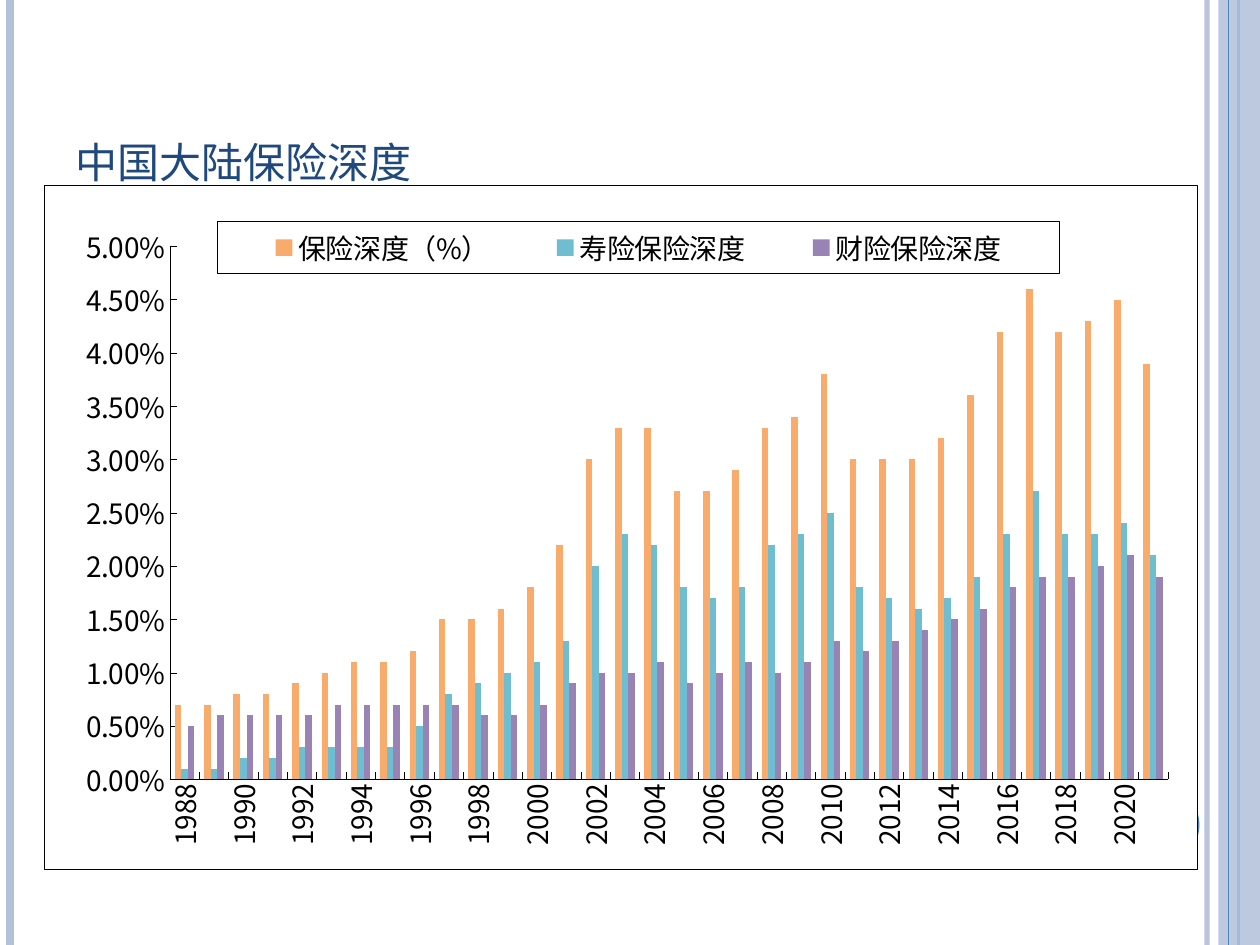
from pptx import Presentation
from pptx.chart.data import CategoryChartData
from pptx.dml.color import RGBColor
from pptx.enum.chart import XL_CHART_TYPE, XL_LEGEND_POSITION, XL_TICK_MARK
from pptx.enum.shapes import MSO_CONNECTOR, MSO_SHAPE
from pptx.enum.text import MSO_ANCHOR, PP_ALIGN
from pptx.oxml import parse_xml
from pptx.oxml.ns import nsdecls, qn
from pptx.util import Inches, Pt

COLUMNS = XL_CHART_TYPE.COLUMN_CLUSTERED
LEGEND_RIGHT = XL_LEGEND_POSITION.RIGHT
TICK_IN, TICK_NONE = XL_TICK_MARK.INSIDE, XL_TICK_MARK.NONE
STRAIGHT = MSO_CONNECTOR.STRAIGHT
RECTANGLE, OVAL = MSO_SHAPE.RECTANGLE, MSO_SHAPE.OVAL
BOTTOM, LEFT = MSO_ANCHOR.BOTTOM, PP_ALIGN.LEFT

WHITE = RGBColor(0xFF, 0xFF, 0xFF)
BLACK = RGBColor(0, 0, 0)
PALE_BLUE = RGBColor(0xB3, 0xC1, 0xDB)
BLUE = RGBColor(0x4F, 0x81, 0xBD)
NAVY = RGBColor(0x1F, 0x49, 0x7D)
ORANGE = RGBColor(0xF9, 0xAB, 0x6B)
TEAL = RGBColor(0x6F, 0xBD, 0xD1)
PURPLE = RGBColor(0x99, 0x83, 0xB5)

TITLE_FONT, CHART_FONT = "Cambria", "Noto Sans CJK SC"
HAIRLINE = Pt(0.25)
WIDTH, HEIGHT = Inches(10), Inches(7.5)

YEARS = [str(year) for year in range(1988, 2022)]
DEPTHS = [
    ("保险深度（%）", ORANGE,
     [0.007, 0.007, 0.008, 0.008, 0.009, 0.01, 0.011, 0.011, 0.012, 0.015, 0.015, 0.016,
      0.018, 0.022, 0.03, 0.033, 0.033, 0.027, 0.027, 0.029, 0.033, 0.034, 0.038, 0.03,
      0.03, 0.03, 0.032, 0.036, 0.042, 0.046, 0.042, 0.043, 0.045, 0.039]),
    ("寿险保险深度", TEAL,
     [0.001, 0.001, 0.002, 0.002, 0.003, 0.003, 0.003, 0.003, 0.005, 0.008, 0.009, 0.01,
      0.011, 0.013, 0.02, 0.023, 0.022, 0.018, 0.017, 0.018, 0.022, 0.023, 0.025, 0.018,
      0.017, 0.016, 0.017, 0.019, 0.023, 0.027, 0.023, 0.023, 0.024, 0.021]),
    ("财险保险深度", PURPLE,
     [0.005, 0.006, 0.006, 0.006, 0.006, 0.007, 0.007, 0.007, 0.007, 0.007, 0.006, 0.006,
      0.007, 0.009, 0.01, 0.01, 0.011, 0.009, 0.01, 0.011, 0.01, 0.011, 0.013, 0.012,
      0.013, 0.014, 0.015, 0.016, 0.018, 0.019, 0.019, 0.02, 0.021, 0.019]),
]


def set_opacity(element, percent):
    color = element.find(".//" + qn("a:srgbClr"))
    color.append(parse_xml(f'<a:alpha {nsdecls("a")} val="{percent * 1000}"/>'))


def add_stripe(slide, box, share, color, weight, opacity=100):
    left, top, width, height = box
    x = left + int(width * share)
    stripe = slide.shapes.add_connector(STRAIGHT, x, top, x, top + height)
    stripe.line.color.rgb = color
    stripe.line.width = Pt(weight)
    if opacity < 100:
        set_opacity(stripe.element, opacity)
    stripe.element.spPr.append(parse_xml(f'<a:effectLst {nsdecls("a")}/>'))


def add_solid(slide, kind, box, color):
    solid = slide.shapes.add_shape(kind, *box)
    solid.shadow.inherit = False
    solid.fill.solid()
    solid.fill.fore_color.rgb = color
    solid.line.fill.background()
    return solid


def add_side_bands(slide, box):
    left, top, width, height = box
    add_stripe(slide, box, 0.958, PALE_BLUE, 3, 93)
    add_stripe(slide, box, 0.008, PALE_BLUE, 4.5)
    add_stripe(slide, box, 0.983, BLUE, 1.5)
    band_left = left + int(width * 0.967)
    band = add_solid(slide, RECTANGLE,
                     (band_left, top, left + width - band_left, height), PALE_BLUE)
    set_opacity(band.element, 87)
    add_stripe(slide, box, 0.975, BLUE, 0.75)
    diameter = int(width * 0.06)
    add_solid(slide, OVAL, (left + int(width * 0.892), top + int(height * 0.833),
                            diameter, diameter), BLUE)


def place_title(slide, box, wording):
    title = slide.shapes.title
    title.left, title.top, title.width, title.height = box
    frame = title.text_frame
    frame.vertical_anchor = BOTTOM
    frame.word_wrap = True
    paragraph = frame.paragraphs[0]
    paragraph.alignment = LEFT
    run = paragraph.add_run()
    run.text = wording
    run.font.size = Pt(30)
    run.font.name = TITLE_FONT
    run.font.color.rgb = NAVY
    title.element.find(".//" + qn("a:rPr")).set("cap", "small")


def style_font(font):
    font.size = Pt(16)
    font.name = CHART_FONT
    font.color.rgb = BLACK


def manual_layout(parent, shares, after=None, inner=False):
    for old in parent.findall(qn("c:layout")):
        parent.remove(old)
    target = '<c:layoutTarget val="inner"/>' if inner else ""
    modes = "".join(f'<c:{side}Mode val="edge"/>' for side in "xy")
    sizes = "".join(f'<c:{side} val="{share}"/>' for side, share in zip("xywh", shares))
    layout = parse_xml(f'<c:layout {nsdecls("c")}><c:manualLayout>{target}{modes}{sizes}'
                       '</c:manualLayout></c:layout>')
    if after is None:
        parent.insert(0, layout)
    else:
        after.addnext(layout)


def panel(bordered):
    fill = f'<a:solidFill><a:srgbClr val="{WHITE}"/></a:solidFill>'
    border = (f'<a:ln w="{HAIRLINE}"><a:solidFill><a:srgbClr val="{BLACK}"/></a:solidFill></a:ln>'
              if bordered else "<a:ln><a:noFill/></a:ln>")
    return parse_xml(f'<c:spPr {nsdecls("c", "a")}>{fill}{border}</c:spPr>')


def style_axis(axis):
    axis.has_major_gridlines = False
    axis.major_tick_mark = TICK_IN
    axis.minor_tick_mark = TICK_NONE
    axis.format.line.color.rgb = BLACK
    axis.format.line.width = HAIRLINE
    style_font(axis.tick_labels.font)


def add_depth_chart(slide, box):
    data = CategoryChartData(number_format="0.00%")
    data.categories = YEARS
    for name, _, depths in DEPTHS:
        data.add_series(name, depths)
    chart = slide.shapes.add_chart(COLUMNS, *box, data).chart
    chart.has_title = False
    style_font(chart.font)

    columns = chart.plots[0]
    columns.gap_width = 150
    columns.overlap = 0
    columns.vary_by_categories = False
    for series, (_, color, _) in zip(columns.series, DEPTHS):
        series.format.fill.solid()
        series.format.fill.fore_color.rgb = color

    year_axis, depth_axis = chart.category_axis, chart.value_axis
    style_axis(year_axis)
    style_axis(depth_axis)
    depth_axis.minimum_scale, depth_axis.maximum_scale = 0, 0.05
    depth_axis.major_unit = 0.005
    depth_axis.tick_labels.number_format = "0.00%"
    depth_axis.tick_labels.number_format_is_linked = False
    year_labels = chart.element.xpath(".//c:catAx/c:txPr/a:bodyPr")[0]
    year_labels.set("rot", "-5400000")
    year_labels.set("vert", "horz")
    no_multi = chart.element.xpath(".//c:catAx/c:noMultiLvlLbl")[0]
    no_multi.addprevious(parse_xml(f'<c:tickLblSkip {nsdecls("c")} val="2"/>'))

    chart.has_legend = True
    chart.legend.position = LEGEND_RIGHT
    chart.legend.include_in_layout = False
    style_font(chart.legend.font)
    legend = chart.element.xpath(".//c:legend")[0]
    manual_layout(legend, (0.15, 0.053, 0.731, 0.076), legend.find(qn("c:legendPos")))
    legend.find(qn("c:txPr")).addprevious(panel(True))

    plot_area = chart.element.xpath(".//c:plotArea")[0]
    manual_layout(plot_area, (0.109, 0.089, 0.866, 0.78), inner=True)
    plot_area.append(panel(False))
    chart.element.find(qn("c:chart")).addnext(panel(True))


def share_box(left, top, width, height):
    return int(WIDTH * left), int(HEIGHT * top), int(WIDTH * width), int(HEIGHT * height)


def main():
    deck = Presentation()
    deck.slide_width, deck.slide_height = WIDTH, HEIGHT
    slide = deck.slides.add_slide(deck.slide_layouts[5])
    add_side_bands(slide, share_box(0, 0, 1, 1))
    place_title(slide, share_box(0.05, 0.04, 0.817, 0.167), "中国大陆保险深度")
    add_depth_chart(slide, share_box(0.035, 0.196, 0.915, 0.724))
    deck.save("out.pptx")


if __name__ == "__main__":
    main()
